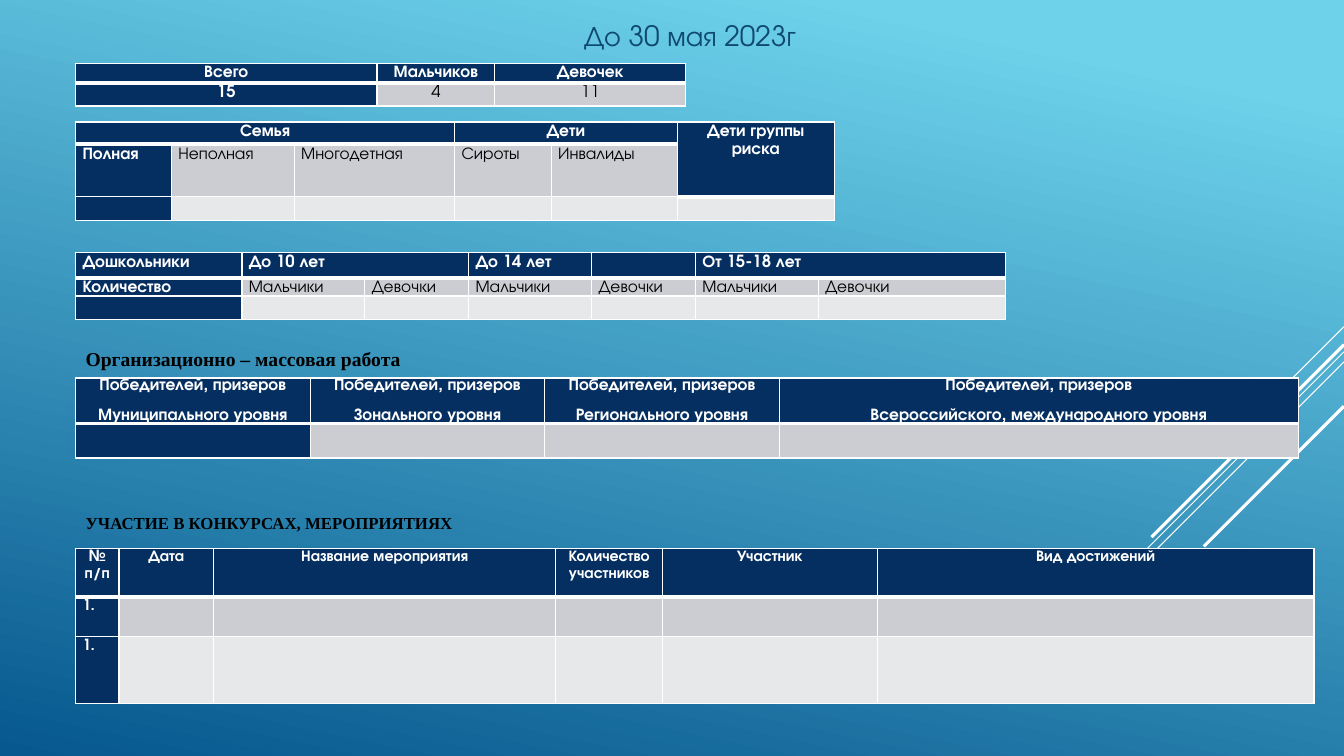
from pptx import Presentation
from pptx.dml.color import RGBColor
from pptx.enum.shapes import MSO_CONNECTOR as Connector
from pptx.enum.text import MSO_ANCHOR as Anchor, MSO_AUTO_SIZE as AutoSize, PP_ALIGN as Align
from pptx.oxml.ns import qn
from pptx.util import Pt
from lxml.etree import SubElement

# Content
DATE = "До 30 мая 2023г"
MASS_WORK = "Организационно – массовая работа"
CONTESTS = "УЧАСТИЕ В КОНКУРСАХ, МЕРОПРИЯТИЯХ"
WINNERS = "Победителей, призеров"
BOYS_GIRLS = ["Мальчики", "Девочки"]

# Merges are (first row, first column, last row, last column)
TABLES = [
    dict(top=45.1, columns=[215.3, 84.2, 136.3], rows=[14, 16.6],
         head_align=Align.CENTER, body_align=Align.CENTER, merges=[],
         cells=[["Всего", "Мальчиков", "Девочек"], ["15", "4", "11"]]),
    dict(top=87.1, columns=[68.4, 87.8, 114.5, 69.1, 90, 112.3], rows=[16, 37.5, 17],
         head_align=Align.CENTER, body_align=Align.LEFT,
         merges=[(0, 0, 0, 2), (0, 3, 0, 4), (0, 5, 1, 5)],
         cells=[["Семья", None, None, "Дети", None, "Дети группы риска"],
                ["Полная", "Неполная", "Многодетная", "Сироты", "Инвалиды", None],
                [None] * 6]),
    dict(top=180.5, columns=[118.8, 87.8, 74.2, 87.8, 74.2, 87.8, 133.9],
         rows=[18, 13, 17], head_align=Align.LEFT, body_align=Align.LEFT,
         merges=[(0, 1, 0, 2), (0, 5, 0, 6)],
         cells=[["Дошкольники", "До 10 лет", None, "До 14 лет", None, "От 15-18 лет", None],
                ["Количество"] + BOYS_GIRLS * 3,
                [None] * 7]),
    dict(top=270, columns=[167.6, 167.6, 167.6, 370.6], rows=[32.4, 24.8],
         head_align=Align.CENTER, body_align=Align.LEFT, merges=[],
         paragraph=dict(space_after=Pt(10)),
         cells=[[f"{WINNERS}\n{level} уровня" for level in
                 ("Муниципального", "Зонального", "Регионального",
                  "Всероссийского, международного")],
                [None] * 4]),
    dict(top=391.7, columns=[31, 67.7, 244.3, 76.3, 153.4, 312], rows=[35, 28, 48],
         head_align=Align.CENTER, body_align=Align.LEFT, merges=[], size="small",
         cells=[["№ п/п", "Дата", "Название мероприятия", "Количество участников",
                 "Участник", "Вид достижений"],
                ["1."] + [None] * 5,
                ["1."] + [None] * 5]),
]

# Diagonal lines: height at the right edge, horizontal run, weight
DIAGONALS = [(233.3, 72, 0.75), (251.3, 234.7, 0.75), (258.5, 149.3, 0.75),
             (246.2, 137.5, 2.25), (290.2, 100.1, 2.25)]

THEME = dict(
    sans="TeX Gyre Adventor", serif="Times New Roman",
    white="FFFFFF", black="000000", navy="052F61", date="0F496F",
    bands=("CCCDD2", "E7E8EA"), sky=((0.1, "6ED2EB"), (1, "06588E")),
    sizes=dict(date=20, heading=14, cell=12, small=11),
    thin=1, thick=3,
)
SIZES = THEME["sizes"]
WIDTH, HEIGHT, LEFT = 960, 540, 54


def color(name):
    return RGBColor.from_string(THEME.get(name, name))


def apply(target, values):
    for name, value in values.items():
        setattr(target, name, value)


def write(frame, text, size, font, ink, bold, **paragraph_format):
    for index, line in enumerate(text.split("\n")):
        paragraph = frame.add_paragraph() if index else frame.paragraphs[0]
        apply(paragraph, paragraph_format)
        run = paragraph.add_run()
        run.text = line
        apply(run.font, dict(size=Pt(size), name=THEME[font], bold=bold))
        run.font.color.rgb = color(ink)


def place(shape, left, top, width, height):
    apply(shape, dict(left=Pt(left), top=Pt(top), width=Pt(width), height=Pt(height)))


def set_borders(cell, top, bottom):
    properties = cell._tc.get_or_add_tcPr()
    thin = THEME["thin"]
    for side, weight in dict(L=thin, R=thin, T=top, B=bottom).items():
        line = SubElement(properties, qn(f"a:ln{side}"), w=str(Pt(weight)))
        fill = SubElement(line, qn("a:solidFill"))
        SubElement(fill, qn("a:srgbClr"), val=THEME["white"])


def draw_table(slide, data):
    columns, rows = data["columns"], data["rows"]
    table = slide.shapes.add_table(len(rows), len(columns), Pt(LEFT), Pt(data["top"]),
                                   Pt(sum(columns)), Pt(sum(rows))).table
    table.horz_banding = False
    for column, width in zip(table.columns, columns):
        column.width = Pt(width)
    for row, height in zip(table.rows, rows):
        row.height = Pt(height)
    # Last header row of every column
    head_end = [0] * len(columns)
    for first_row, first, last_row, last in data["merges"]:
        table.cell(first_row, first).merge(table.cell(last_row, last))
        for index in range(first, last + 1):
            head_end[index] = last_row
    size = SIZES[data.get("size", "cell")]
    spacing = data.get("paragraph", dict(line_spacing=1.15))
    for r, texts in enumerate(data["cells"]):
        for c, text in enumerate(texts):
            cell = table.cell(r, c)
            is_head = r <= head_end[c]
            is_dark = is_head or c == 0
            apply(cell, dict(margin_left=Pt(5), margin_right=Pt(5), margin_top=0,
                             margin_bottom=0, vertical_anchor=Anchor.TOP))
            set_borders(cell,
                        THEME["thick"] if r == head_end[c] + 1 else THEME["thin"],
                        THEME["thick"] if r == head_end[c] else THEME["thin"])
            cell.fill.solid()
            cell.fill.fore_color.rgb = color("navy" if is_dark else THEME["bands"][(r - 1) % 2])
            if text:
                align = data["head_align" if is_head else "body_align"]
                write(cell.text_frame, text, size, "sans", "white" if is_dark else "black",
                      is_dark, alignment=align, **spacing)
            else:
                SubElement(cell.text_frame.paragraphs[0]._p, qn("a:endParaRPr"),
                           sz=str(size * 100))


def main():
    presentation = Presentation()
    apply(presentation, dict(slide_width=Pt(WIDTH), slide_height=Pt(HEIGHT)))
    slide = presentation.slides.add_slide(presentation.slide_layouts[1])

    # Background
    background = slide.background.fill
    background.gradient()
    background.gradient_angle = 360 - 102
    for stop, (position, tint) in zip(background.gradient_stops, THEME["sky"]):
        stop.position = position
        stop.color.rgb = color(tint)

    # Diagonal lines
    for y, run, weight in DIAGONALS:
        line = slide.shapes.add_connector(Connector.STRAIGHT, Pt(WIDTH), Pt(y),
                                          Pt(WIDTH - run), Pt(y + run))
        line.line.width = Pt(weight)
        line.line.color.rgb = color("white")
        SubElement(line._element.spPr, qn("a:effectLst"))

    # Contest heading
    title = slide.shapes.title
    place(title, LEFT, 353.5, 885, 81.4)
    apply(title.text_frame, dict(vertical_anchor=Anchor.TOP, margin_top=Pt(12.5),
                                 word_wrap=True, auto_size=AutoSize.NONE))
    write(title.text_frame, CONTESTS, SIZES["cell"], "serif", "black", True,
          alignment=Align.LEFT)

    # Date
    body = slide.placeholders[1]
    place(body, LEFT, 0, 877.7, 51)
    apply(body.text_frame, dict(vertical_anchor=Anchor.MIDDLE, word_wrap=True,
                                auto_size=AutoSize.NONE))
    write(body.text_frame, DATE, SIZES["date"], "sans", "date", False,
          alignment=Align.CENTER, space_before=Pt(4), space_after=Pt(6))
    properties = body.text_frame.paragraphs[0]._p.get_or_add_pPr()
    for name in ("marL", "indent"):
        properties.set(name, "0")
    SubElement(properties, qn("a:buNone"))

    # Tables
    for data in TABLES:
        draw_table(slide, data)

    # Mass work heading
    heading = slide.shapes.add_textbox(Pt(LEFT), Pt(242), Pt(242), Pt(25))
    apply(heading.text_frame, dict(word_wrap=False, auto_size=AutoSize.SHAPE_TO_FIT_TEXT))
    write(heading.text_frame, MASS_WORK, SIZES["heading"], "serif", "black", True,
          line_spacing=1.15, space_after=Pt(10))

    presentation.save("out.pptx")


if __name__ == "__main__":
    main()
